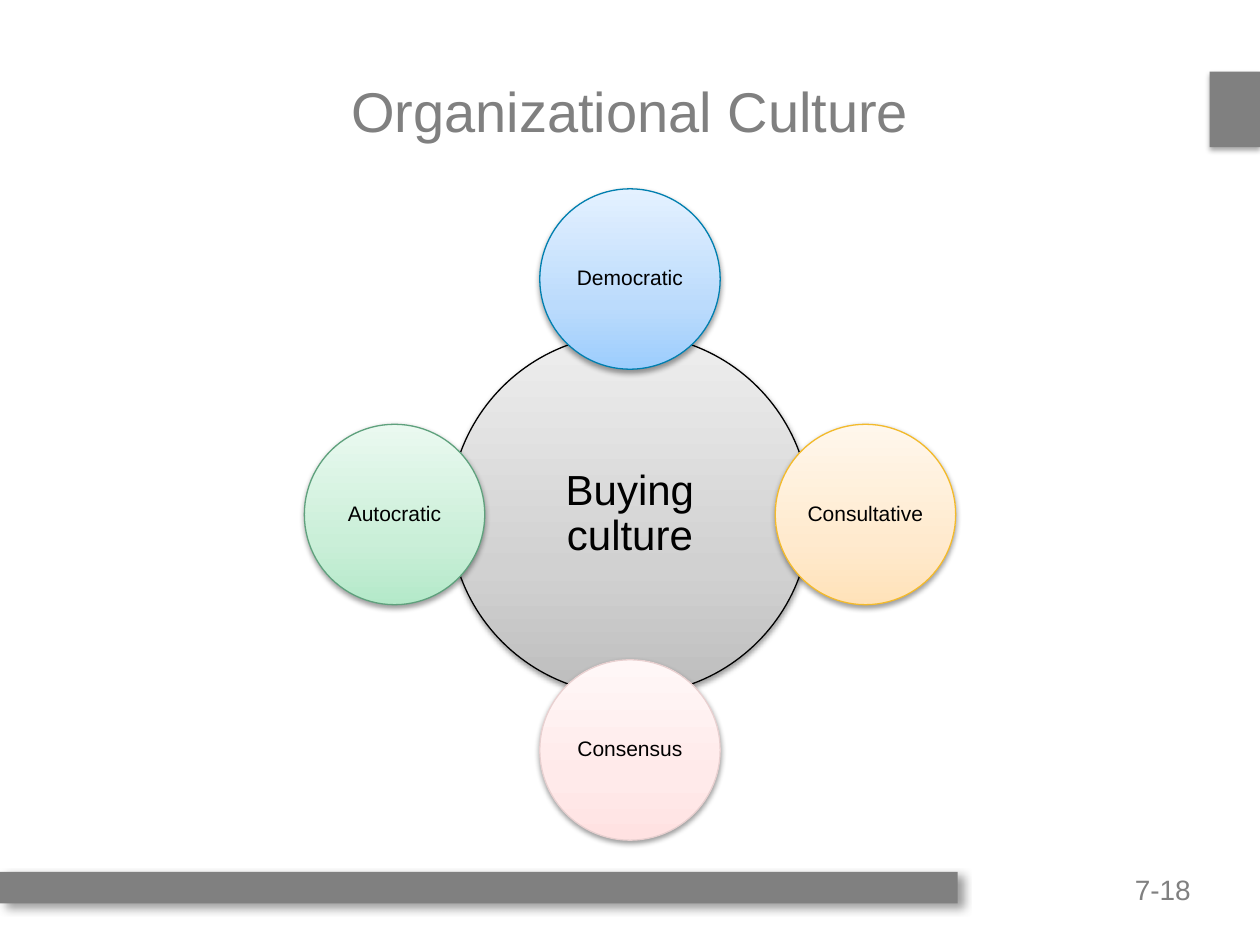
import copy
import math

import lxml.etree
import pptx
import pptx.dml.color
import pptx.enum.shapes
import pptx.enum.text
import pptx.oxml.ns
import pptx.util

Pt = pptx.util.Pt
RGB = pptx.dml.color.RGBColor
SHAPE = pptx.enum.shapes.MSO_SHAPE
ALIGN = pptx.enum.text.PP_ALIGN
MIDDLE = pptx.enum.text.MSO_ANCHOR.MIDDLE
qn = pptx.oxml.ns.qn

FONT = "Arial"
WHITE = RGB(0xFF, 0xFF, 0xFF)
BLACK = RGB(0x00, 0x00, 0x00)
GRAY = RGB(0x80, 0x80, 0x80)
HUB_SHADES = (RGB(0xBD, 0xBD, 0xBD), RGB(0xD1, 0xD1, 0xD1), RGB(0xEE, 0xEE, 0xEE))
BLUE_SHADES = (RGB(0x9C, 0xCD, 0xFD), RGB(0xBB, 0xDB, 0xFC), RGB(0xE4, 0xF1, 0xFF))
BLUE_EDGE = RGB(0x00, 0x7F, 0xAF)
AMBER_SHADES = (RGB(0xFF, 0xE2, 0xB9), RGB(0xFF, 0xEA, 0xCE), RGB(0xFF, 0xF7, 0xEC))
AMBER_EDGE = RGB(0xF3, 0xBA, 0x2B)
PINK_SHADES = (RGB(0xFF, 0xE2, 0xE2), RGB(0xFF, 0xEA, 0xEA), RGB(0xFF, 0xF7, 0xF7))
PINK_EDGE = RGB(0xE8, 0xD0, 0xD0)
GREEN_SHADES = (RGB(0xB4, 0xE9, 0xC9), RGB(0xCA, 0xEF, 0xD8), RGB(0xEA, 0xF9, 0xF0))
GREEN_EDGE = RGB(0x5F, 0xA1, 0x7D)

STYLES = (
    ("Democratic", BLUE_SHADES, BLUE_EDGE),
    ("Consultative", AMBER_SHADES, AMBER_EDGE),
    ("Consensus", PINK_SHADES, PINK_EDGE),
    ("Autocratic", GREEN_SHADES, GREEN_EDGE),
)


def cast_shadow(shape, opacity, blur, distance, angle):
    """Give the shape a black outer shadow."""
    shape.shadow.inherit = False
    effects = shape._element.spPr.find(qn("a:effectLst"))
    shadow = lxml.etree.SubElement(
        effects, qn("a:outerShdw"), blurRad=str(Pt(blur)), dist=str(Pt(distance)),
        dir=str(angle * 60000), algn="ctr", rotWithShape="0")
    color = lxml.etree.SubElement(shadow, qn("a:srgbClr"), val=str(BLACK))
    lxml.etree.SubElement(color, qn("a:alpha"), val=str(opacity * 1000))


def shade(shape, colors):
    """Fill the shape with a three-stop gradient rising from the bottom."""
    shape.fill.gradient()
    shape.fill.gradient_angle = 90
    stop_list = shape._element.spPr.find(qn("a:gradFill")).find(qn("a:gsLst"))
    stop_list.insert(1, copy.deepcopy(stop_list[0]))
    for stop, position, color in zip(shape.fill.gradient_stops, (0, 0.35, 1), colors):
        stop.position = position
        stop.color.rgb = color


def write(paragraph, text, size, color, align):
    """Write the lines of text into the paragraph."""
    paragraph.alignment = align
    for index, line in enumerate(text.split("\n")):
        if index:
            paragraph.add_line_break()
        run = paragraph.add_run()
        run.text = line
        run.font.name = FONT
        run.font.size = Pt(size)
        run.font.color.rgb = color


def set_insets(frame, inset):
    """Give the text frame the same inset on every side."""
    frame.margin_left = frame.margin_right = Pt(inset)
    frame.margin_top = frame.margin_bottom = Pt(inset)


def add_bar(slide, left, top, width, height, shadow):
    """Add a plain gray bar with a shadow."""
    bar = slide.shapes.add_shape(SHAPE.RECTANGLE, Pt(left), Pt(top), Pt(width), Pt(height))
    bar.fill.solid()
    bar.fill.fore_color.rgb = GRAY
    bar.line.fill.background()
    cast_shadow(bar, *shadow)


def add_frame(slide, width, height):
    """Add the corner block, the footer bar and the page number."""
    add_bar(slide, width - 28.8, 41, 28.8, 43.2, (35, 3.1, 1.8, 90))
    footer_top = height - 41.8
    add_bar(slide, 0, footer_top, 547.2, 18, (38, 5, 4, 45))
    number = slide.shapes.add_textbox(Pt(width - 180), Pt(footer_top), Pt(140.4), Pt(18))
    frame = number.text_frame
    frame.word_wrap = True
    set_insets(frame, 0)
    frame.paragraphs[0].line_spacing = 1.02
    write(frame.paragraphs[0], "7-18", 16, GRAY, ALIGN.RIGHT)


def set_title(slide, left, top, width, height):
    """Place and format the title."""
    title = slide.shapes.title
    title.left, title.top, title.width, title.height = map(Pt, (left, top, width, height))
    title.text_frame.vertical_anchor = MIDDLE
    write(title.text_frame.paragraphs[0], "Organizational Culture", 32, GRAY, ALIGN.CENTER)


def add_circle(slide, center_x, center_y, diameter, text, size, shades, edge):
    """Add a shaded, labelled circle around a centre."""
    circle = slide.shapes.add_shape(
        SHAPE.OVAL, Pt(center_x - diameter / 2), Pt(center_y - diameter / 2),
        Pt(diameter), Pt(diameter))
    shade(circle, shades)
    circle.line.color.rgb = edge
    circle.line.width = Pt(0.75)
    cast_shadow(circle, 38, 3.1, 1.6, 90)
    frame = circle.text_frame
    frame.word_wrap = True
    frame.vertical_anchor = MIDDLE
    set_insets(frame, size / 12)
    frame.paragraphs[0].line_spacing = 0.9
    write(frame.paragraphs[0], text, size, BLACK, ALIGN.CENTER)


def add_culture_wheel(slide, left, top, extent):
    """Add the hub with the four buying styles around it, clockwise from the top."""
    center_x, center_y = left + extent / 2, top + extent / 2
    style_diameter = extent * 0.277
    orbit = (extent - style_diameter) / 2
    add_circle(slide, center_x, center_y, style_diameter * 2, "Buying\nculture", 24,
               HUB_SHADES, BLACK)
    for index, (name, shades, edge) in enumerate(STYLES):
        angle = math.tau * index / len(STYLES)
        add_circle(slide, center_x + orbit * math.sin(angle),
                   center_y - orbit * math.cos(angle),
                   style_diameter, name, 12, shades, edge)


def main():
    """Build the slide and save it."""
    deck = pptx.Presentation()
    deck.slide_width, deck.slide_height = Pt(720), Pt(540)
    slide = deck.slides.add_slide(deck.slide_layouts[5])
    slide.background.fill.solid()
    slide.background.fill.fore_color.rgb = WHITE
    add_frame(slide, 720, 540)
    set_title(slide, 43.2, 18, 633.6, 90)
    add_culture_wheel(slide, 173.9, 107.9, 372.2)
    deck.save("out.pptx")


if __name__ == "__main__":
    main()
